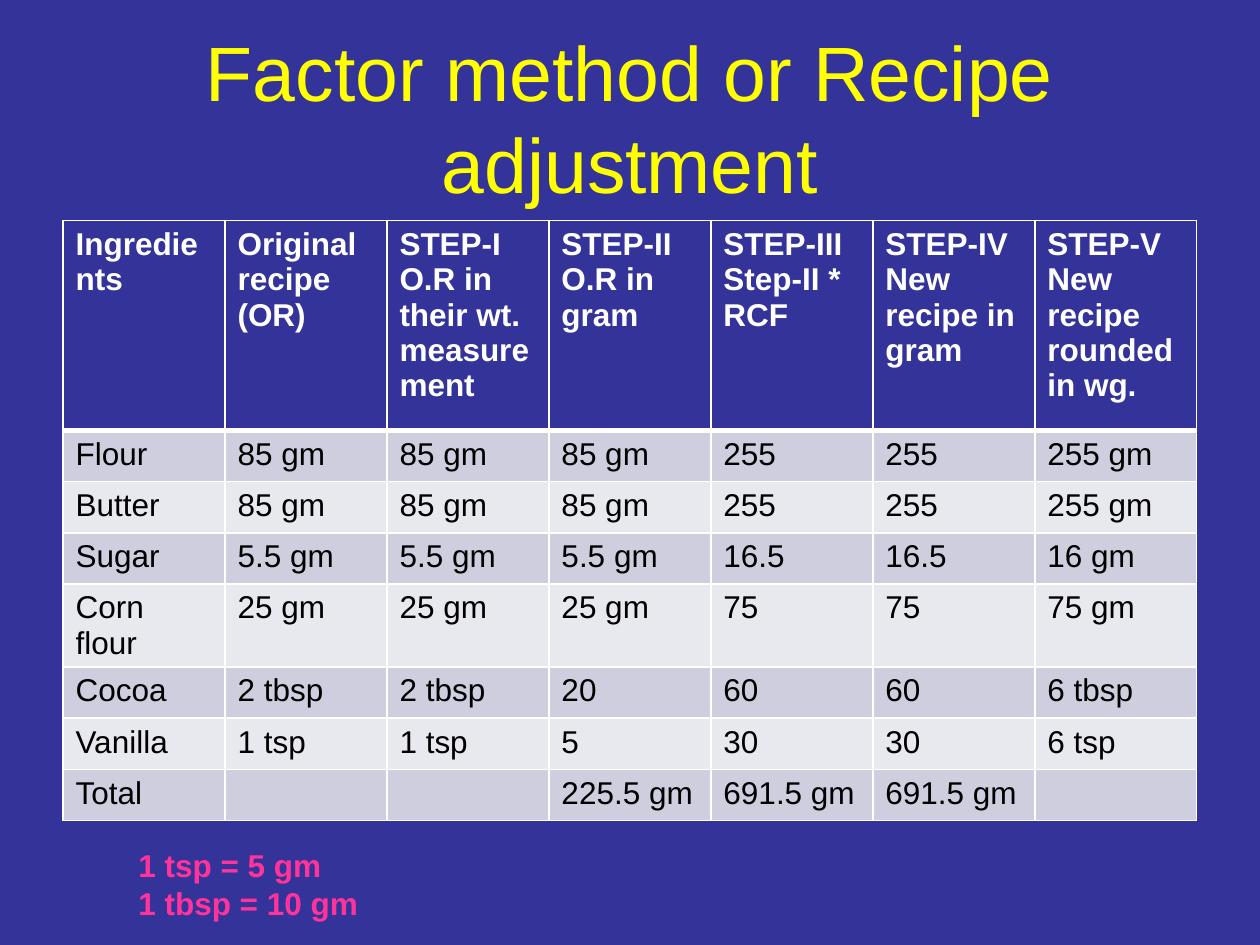
from lxml.etree import SubElement as Sub
from pptx import Presentation
from pptx.dml.color import RGBColor as Rgb
from pptx.enum.text import MSO_ANCHOR as Anchor, MSO_AUTO_SIZE as Auto, PP_ALIGN as Align
from pptx.oxml.ns import qn
from pptx.util import Cm, Pt

HUES = {"back": "333399", "title": "FFFF00", "white": "FFFFFF", "black": "000000",
        "odd": "CECEDE", "even": "E8E8EF", "note": "FF3399"}
HEAD = ["Ingredients", "Original recipe (OR)", "STEP-I O.R in their wt. measurement",
        "STEP-II\nO.R in gram", "STEP-III\nStep-II * RCF",
        "STEP-IV\nNew recipe in gram", "STEP-V\nNew recipe rounded in wg."]
ROWS = [
    ["Flour", "85 gm", "85 gm", "85 gm", "255", "255", "255 gm"],
    ["Butter", "85 gm", "85 gm", "85 gm", "255", "255", "255 gm"],
    ["Sugar", "5.5 gm", "5.5 gm", "5.5 gm", "16.5", "16.5", "16 gm"],
    ["Corn flour", "25 gm", "25 gm", "25 gm", "75", "75", "75 gm"],
    ["Cocoa", "2 tbsp", "2 tbsp", "20", "60", "60", "6 tbsp"],
    ["Vanilla", "1 tsp", "1 tsp", "5", "30", "30", "6 tsp"],
    ["Total", "", "", "225.5 gm", "691.5 gm", "691.5 gm", ""],
]


def paint(fill, hue):
    """Fill with one solid colour."""
    fill.solid()
    fill.fore_color.rgb = Rgb.from_string(HUES[hue])


def write(frame, text, size=18, hue="black", bold=False, align=Align.LEFT):
    """Put formatted text in a frame, one paragraph per line."""
    frame.text = text
    for para in frame.paragraphs:
        para.alignment = align
        font = para.font
        if para.runs:
            font = para.runs[0].font
        font.name, font.size, font.bold = "Arial", Pt(size), bold
        font.color.rgb = Rgb.from_string(HUES[hue])


def edge(cell, side, width):
    """Draw one white border of a cell."""
    line = Sub(cell._tc.get_or_add_tcPr(), qn(f"a:ln{side}"), w=str(Pt(width)))
    Sub(Sub(line, qn("a:solidFill")), qn("a:srgbClr"), val=HUES["white"])


def add_title(slide):
    """Place and format the title."""
    title = slide.shapes.title
    title.left, title.top, title.width, title.height = Cm(1.27), Cm(0.76), Cm(22.86), Cm(3.18)
    frame = title.text_frame
    frame.auto_size, frame.vertical_anchor = Auto.NONE, Anchor.MIDDLE
    write(frame, "Factor method or Recipe adjustment", size=44, hue="title", align=Align.CENTER)


def add_grid(slide):
    """Build the recipe table with its banded rows."""
    data = [HEAD] + ROWS
    grid = slide.shapes.add_table(len(data), len(HEAD), Cm(1.27), Cm(4.45),
                                  Cm(22.86), Cm(11.5)).table
    for col in grid.columns:
        col.width = Cm(22.86 / len(HEAD))
    for r, texts in enumerate(data):
        head = r == 0
        grid.rows[r].height = Cm(4.23 if head else 1.03)
        for c, text in enumerate(texts):
            cell = grid.cell(r, c)
            write(cell.text_frame, text, hue="white" if head else "black", bold=head)
            for side in "LRTB":
                thick = (r, side) in ((0, "B"), (1, "T"))
                edge(cell, side, 3 if thick else 1)
            paint(cell.fill, "back" if head else "odd" if r % 2 else "even")


def add_note(slide):
    """Add the unit conversions below the table."""
    box = slide.shapes.add_textbox(Cm(2.54), Cm(16.93), Cm(4.98), Cm(1.8))
    box.text_frame.word_wrap = False
    write(box.text_frame, "1 tsp = 5 gm\n1 tbsp = 10 gm", hue="note", bold=True)


def main():
    """Build and save the slide."""
    deck = Presentation()
    deck.slide_width, deck.slide_height = Cm(25.4), Cm(19.05)
    slide = deck.slides.add_slide(deck.slide_layouts[5])
    paint(slide.background.fill, "back")
    add_title(slide)
    add_grid(slide)
    add_note(slide)
    deck.save("out.pptx")


if __name__ == "__main__":
    main()
